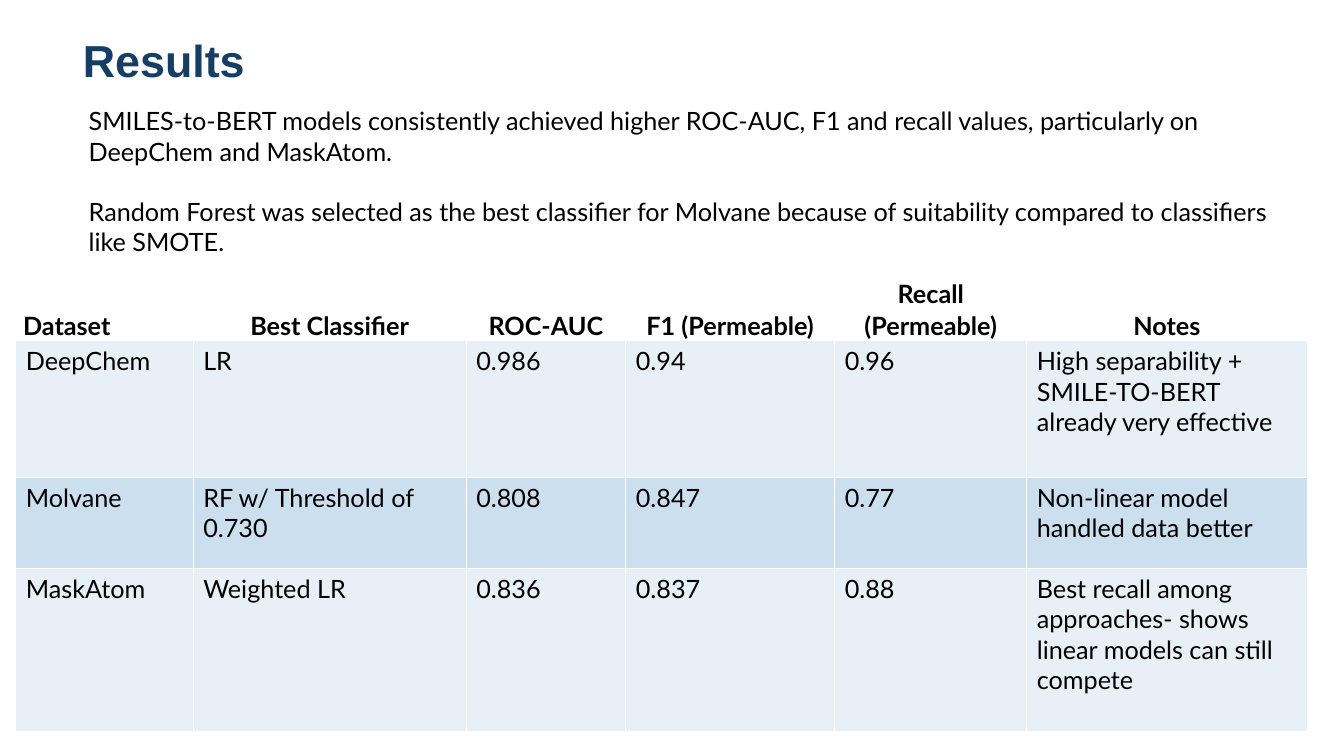
from lxml.etree import SubElement
from pptx import Presentation
from pptx.dml.color import RGBColor
from pptx.enum.text import MSO_ANCHOR as ANCHOR, PP_ALIGN as ALIGN
from pptx.oxml.ns import qn
from pptx.util import Pt

PX = 9525
NAVY = RGBColor(0x16, 0x3E, 0x64)
BLACK = RGBColor(0, 0, 0)
WHITE = RGBColor(0xFF, 0xFF, 0xFF)
BANDS = [RGBColor(0xE7, 0xF0, 0xF7), RGBColor(0xCC, 0xDF, 0xEF)]

SUMMARY = [
    "SMILES-to-BERT models consistently achieved higher ROC-AUC, F1 and recall values, "
    "particularly on DeepChem and MaskAtom.",
    "Random Forest was selected as the best classifier for Molvane because of suitability "
    "compared to classifiers like SMOTE.",
]
RESULTS = [
    ["Dataset", "Best Classifier", "ROC-AUC", "F1 (Permeable)", "Recall (Permeable)", "Notes"],
    ["DeepChem", "LR", "0.986", "0.94", "0.96",
     "High separability + SMILE-TO-BERT already very effective"],
    ["Molvane", "RF w/ Threshold of 0.730", "0.808", "0.847", "0.77",
     "Non-linear model handled data better"],
    ["MaskAtom", "Weighted LR", "0.836", "0.837", "0.88",
     "Best recall among approaches- shows linear models can still compete"],
]
COL_WIDTHS = [169, 260, 152, 199, 183, 267]
ROW_HEIGHTS = [57, 130, 87, 155]


def write(tf, *lines, size=18, font="Lato", color=BLACK, bold=False,
          align=ALIGN.LEFT, spacing=None, gap=0):
    """Fill a text frame with one paragraph per line of text."""
    for i, line in enumerate(lines):
        p = tf.add_paragraph() if i else tf.paragraphs[0]
        p.alignment, p.line_spacing = align, spacing
        p.space_before = Pt(gap if i else 0)
        r = p.add_run()
        r.text = line
        r.font.size, r.font.name, r.font.bold = Pt(size), font, bold
        r.font.color.rgb = color


def set_insets(box, left, top, right, bottom):
    """Set the inner margins of a text frame or cell in px."""
    box.margin_left, box.margin_top = left * PX, top * PX
    box.margin_right, box.margin_bottom = right * PX, bottom * PX


def add_text(s, x, y, w, h, *lines, insets=None, **fmt):
    """Add a wrapping text box."""
    tf = s.shapes.add_textbox(x * PX, y * PX, w * PX, h * PX).text_frame
    tf.word_wrap = True
    if insets:
        set_insets(tf, *insets)
    write(tf, *lines, **fmt)


def add_borders(cell, color, width):
    """Draw a solid line on all four sides of a cell."""
    tc_pr = cell._tc.get_or_add_tcPr()
    for side in ("a:lnL", "a:lnR", "a:lnT", "a:lnB"):
        ln = SubElement(tc_pr, qn(side), w=str(Pt(width)))
        SubElement(SubElement(ln, qn("a:solidFill")), qn("a:srgbClr"), val=str(color))


def format_header(cell, text, align):
    """Write an unfilled header cell with bold text at the bottom."""
    cell.fill.background()
    cell.vertical_anchor = ANCHOR.BOTTOM
    set_insets(cell, 7, 0, 7, 0)
    write(cell.text_frame, text, bold=True, align=align, spacing=1.07)


def format_body(cell, text, color):
    """Write a filled body cell."""
    cell.fill.solid()
    cell.fill.fore_color.rgb = color
    write(cell.text_frame, text)


def add_results_table(s, x, y):
    """Add the table of results with banded rows."""
    table = s.shapes.add_table(len(RESULTS), len(COL_WIDTHS), x * PX, y * PX,
                               sum(COL_WIDTHS) * PX, sum(ROW_HEIGHTS) * PX).table
    table.first_row = table.horz_banding = False
    for col, width in zip(table.columns, COL_WIDTHS):
        col.width = width * PX
    for i, (row, height) in enumerate(zip(table.rows, ROW_HEIGHTS)):
        row.height = height * PX
        for j, cell in enumerate(row.cells):
            add_borders(cell, WHITE, 1)
            if i == 0:
                format_header(cell, RESULTS[i][j], ALIGN.CENTER if j else ALIGN.LEFT)
            else:
                format_body(cell, RESULTS[i][j], BANDS[(i - 1) % 2])


def main():
    """Build the slide and save it."""
    prs = Presentation()
    prs.slide_width, prs.slide_height = 1280 * PX, 720 * PX
    s = prs.slides.add_slide(prs.slide_layouts[6])
    add_text(s, 79, 31, 882, 77, "Results", insets=(0, 0, 0, 5),
             size=32, font="Arial", color=NAVY, bold=True)
    add_results_table(s, 15, 263)
    add_text(s, 75, 96, 1162, 156, *SUMMARY, gap=21.6)
    prs.save("out.pptx")


if __name__ == "__main__":
    main()
